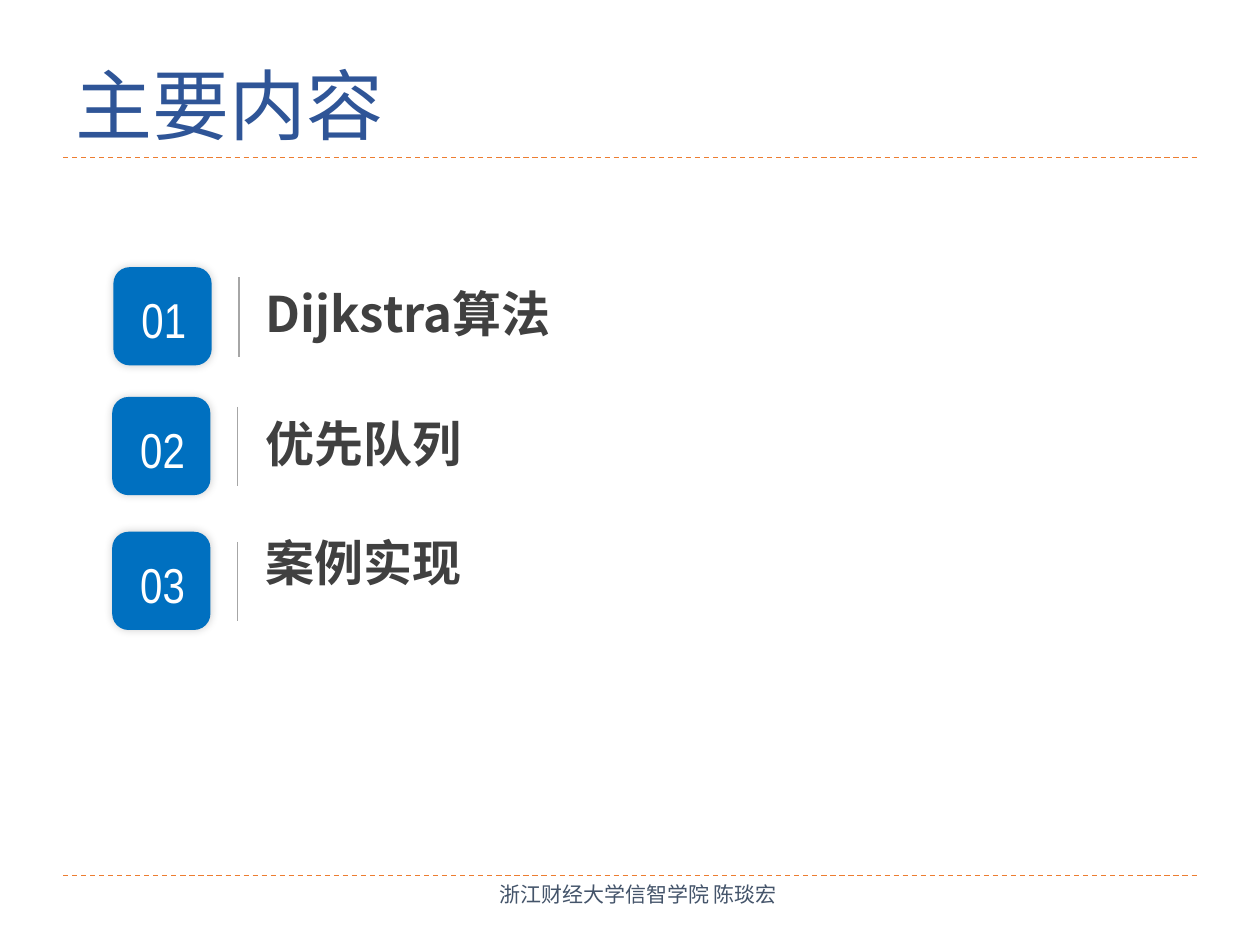
import pptx
import pptx.dml.color
import pptx.enum.dml
import pptx.enum.shapes
import pptx.enum.text
import pptx.oxml
import pptx.oxml.ns
import pptx.util

COLUMNS, ROWS = 100, 75
WIDTH, HEIGHT = pptx.util.Inches(10), pptx.util.Inches(7.5)
ALIGN = pptx.enum.text.PP_ALIGN
ANCHOR = pptx.enum.text.MSO_ANCHOR
CJK_FONT = "Noto Sans CJK SC"


def across(columns):
    """Turn grid columns into a length."""
    return round(WIDTH * columns / COLUMNS)


def down(rows):
    """Turn grid rows into a length."""
    return round(HEIGHT * rows / ROWS)


def place(box):
    """Turn a grid box into left, top, width and height."""
    left, top, width, height = box
    return across(left), down(top), across(width), down(height)


def color(value):
    """Read a hex string as a colour."""
    return pptx.dml.color.RGBColor.from_string(value)


def add_effects(shape, content=""):
    """Give a shape its own list of effects."""
    namespace = pptx.oxml.ns.nsdecls("a")
    effects = pptx.oxml.parse_xml(f"<a:effectLst {namespace}>{content}</a:effectLst>")
    shape._element.spPr.append(effects)


def add_text(page, box, text, *, size, font, fill, bold=False,
             align=ALIGN.LEFT, anchor=ANCHOR.TOP, spacing=1.0):
    """Write one formatted paragraph in a text box."""
    frame = page.shapes.add_textbox(*place(box)).text_frame
    frame.word_wrap = True
    frame.vertical_anchor = anchor
    para = frame.paragraphs[0]
    para.alignment = align
    para.line_spacing = spacing
    span = para.add_run()
    span.text = text
    span.font.size = pptx.util.Pt(size)
    span.font.name = font
    span.font.bold = bold
    span.font.color.rgb = color(fill)
    east_asian = pptx.oxml.parse_xml(
        f'<a:ea {pptx.oxml.ns.nsdecls("a")} typeface="{CJK_FONT}"/>')
    span.font._element.find(pptx.oxml.ns.qn("a:latin")).addnext(east_asian)


def add_line(page, start, end, *, fill, width, dashed=False):
    """Draw a straight line between two grid points."""
    line = page.shapes.add_connector(
        pptx.enum.shapes.MSO_CONNECTOR.STRAIGHT,
        across(start[0]), down(start[1]), across(end[0]), down(end[1]))
    line.line.color.rgb = color(fill)
    line.line.width = pptx.util.Pt(width)
    if dashed:
        line.line.dash_style = pptx.enum.dml.MSO_LINE.DASH
    add_effects(line)


def add_rule(page, left, top, width):
    """Draw a dashed rule across the page."""
    add_line(page, (left, top), (left + width, top),
             fill="ED7D31", width=0.75, dashed=True)


def add_header(page, box, text):
    """Place the title above its rule."""
    left, top, width, height = box
    add_rule(page, left, top + height, width)
    add_text(page, box, text, size=44, font="Calibri", fill="2F5597",
             anchor=ANCHOR.BOTTOM, spacing=0.9)


def add_footer(page, box, text):
    """Place the footer below its rule."""
    left, top, width, height = box
    add_rule(page, left, top, width)
    add_text(page, (left + 26.7, top, 38.3, height), text, size=12,
             font="Calibri", fill="44546A", align=ALIGN.CENTER)


def add_badge(page, box, number):
    """Place a softly shadowed square with its number."""
    left, top, width, height = box
    badge = page.shapes.add_shape(
        pptx.enum.shapes.MSO_SHAPE.ROUNDED_RECTANGLE, *place(box))
    badge.fill.solid()
    badge.fill.fore_color.rgb = color("0070C0")
    badge.line.fill.background()
    add_effects(badge, f'<a:outerShdw blurRad="{pptx.util.Pt(5)}" dist="0" '
                       'algn="ctr" rotWithShape="0"><a:srgbClr val="000000">'
                       '<a:alpha val="19000"/></a:srgbClr></a:outerShdw>')
    add_text(page, (left + 0.1, top + 1.3, width, 5.7), f"{number:02}", size=28,
             font="Arial Narrow", fill="FFFFFF", align=ALIGN.CENTER)


def add_topic(page, box, number, text, label_offset):
    """Place a badge, a divider and a label in one row."""
    left, top, width, height = box
    add_badge(page, (left, top, height, height), number)
    divider = left + 9.95
    add_line(page, (divider, top + 0.8), (divider, top + 7.1),
             fill="A6A6A6", width=1)
    label = 20.1
    add_text(page, (label, top + label_offset, left + width - label, 5.7), text,
             size=28, font=CJK_FONT, fill="404040", bold=True)


def main():
    """Build the contents slide."""
    deck = pptx.Presentation()
    deck.slide_width, deck.slide_height = WIDTH, HEIGHT
    page = deck.slides.add_slide(deck.slide_layouts[6])
    add_header(page, (5, 1.7, 90, 10.8), "主要内容")
    add_footer(page, (5, 69.5, 90, 4), "浙江财经大学信智学院 陈琰宏 ")
    topics = [
        ((9, 21.2, 73.4, 7.8), "Dijkstra算法", 0.8),
        ((8.9, 31.5, 70.4, 7.8), "优先队列", 0.8),
        ((8.9, 42.2, 36.3, 7.8), "案例实现", -0.4),
    ]
    for number, (box, text, label_offset) in enumerate(topics, 1):
        add_topic(page, box, number, text, label_offset)
    deck.save("out.pptx")


if __name__ == "__main__":
    main()
